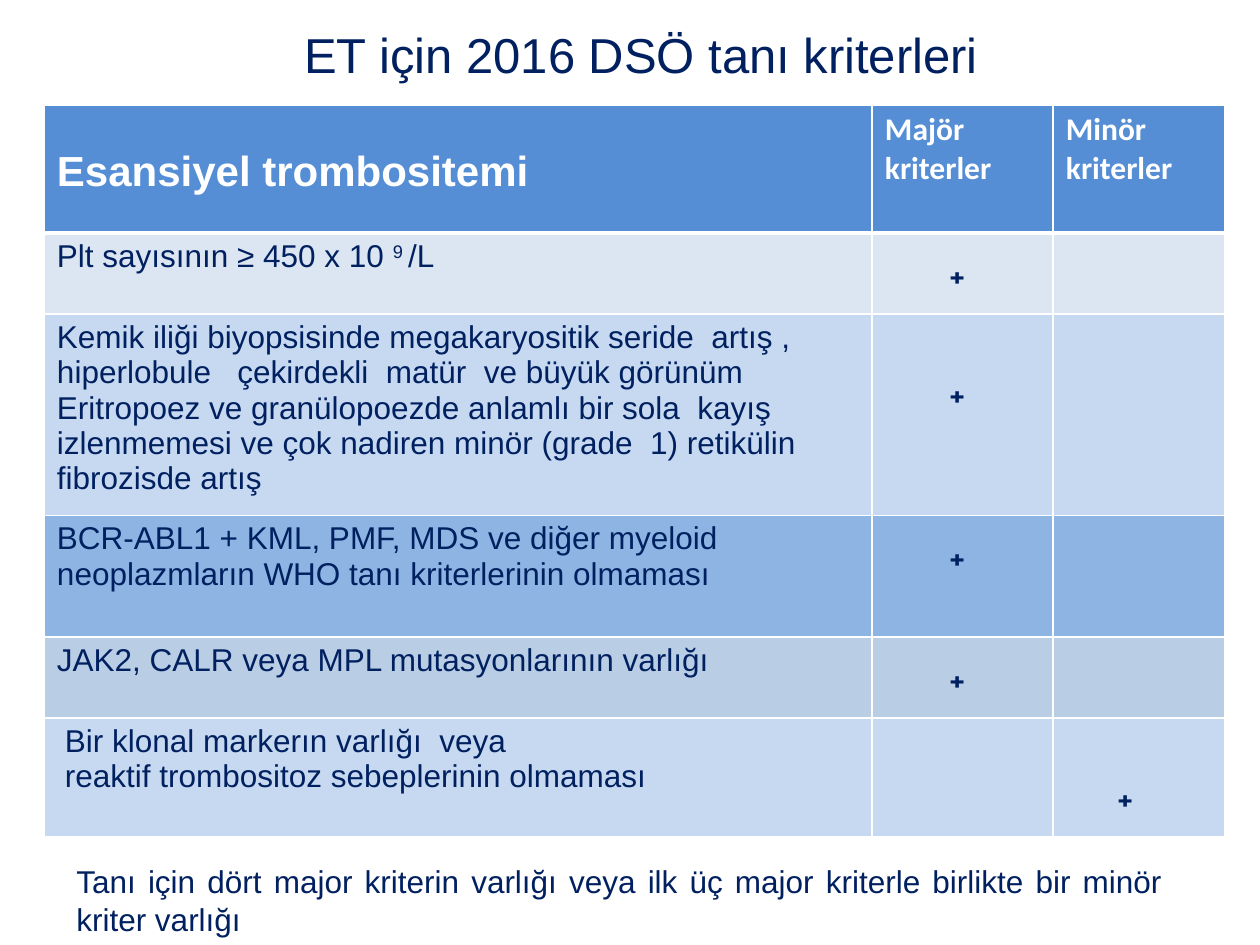
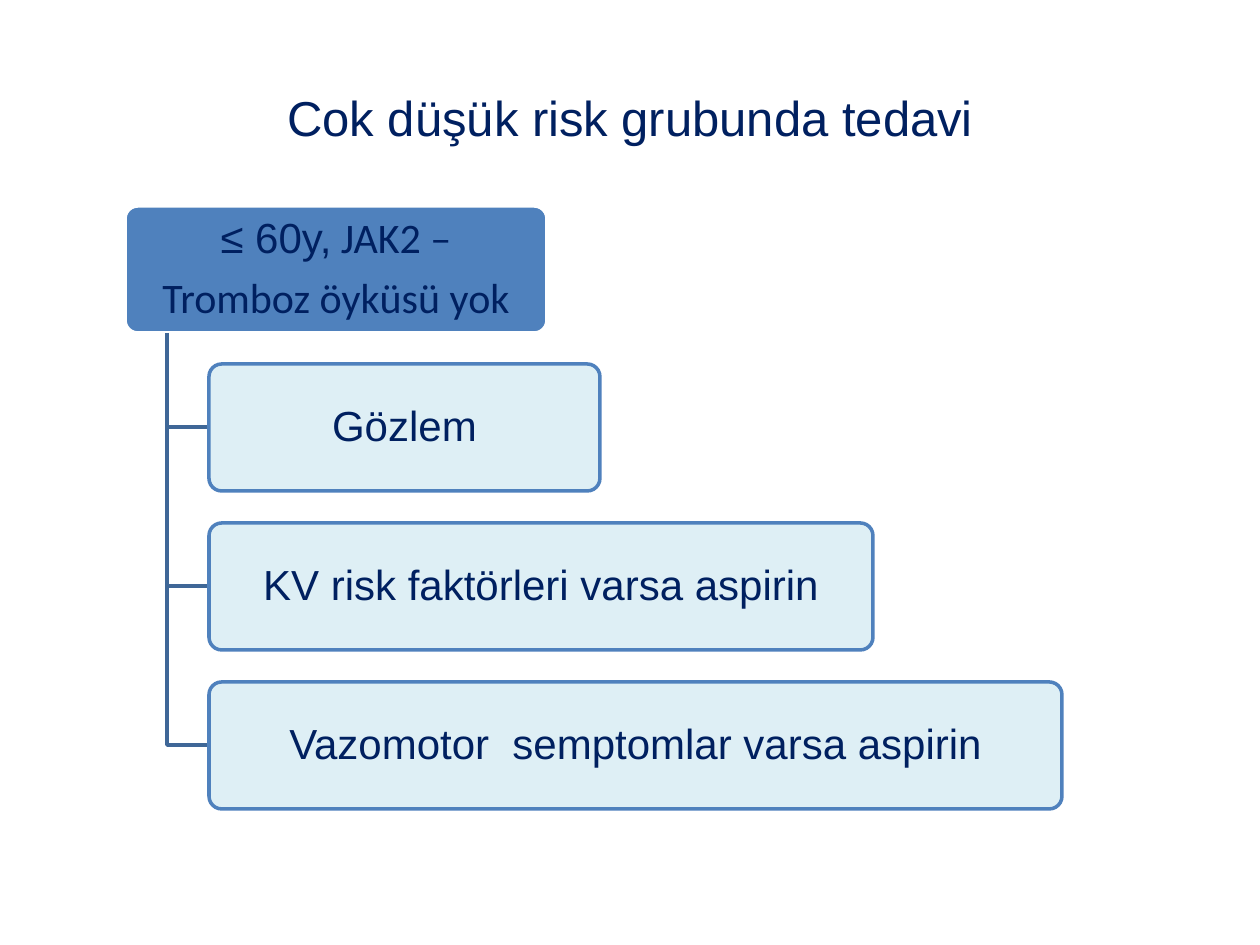
from pptx import Presentation
from pptx.dml.color import RGBColor
from pptx.enum.shapes import MSO_SHAPE
from pptx.enum.text import MSO_ANCHOR, PP_ALIGN
from pptx.oxml.ns import qn
from pptx.util import Emu, Pt
from lxml.etree import SubElement

PX = 914400 / 126
NAVY = RGBColor(0x00, 0x20, 0x60)
WHITE = RGBColor(0xFF, 0xFF, 0xFF)
HEADER = RGBColor(0x55, 0x8E, 0xD5)
ICE = RGBColor(0xDC, 0xE6, 0xF2)
SKY = RGBColor(0xC6, 0xD9, 0xF1)
MID = RGBColor(0x8E, 0xB4, 0xE3)
STEEL = RGBColor(0xB9, 0xCD, 0xE5)
BLUE = RGBColor(0x4F, 0x81, 0xBD)
ELBOW = RGBColor(0x3F, 0x67, 0x97)
PALE = RGBColor(0xDB, 0xEE, 0xF4)
SANS = "Arial"
BODY = "Calibri"
MARK = "˖"


def px(n):
    return Emu(round(n * PX))


class Deck:
    def __init__(self):
        self.prs = Presentation()
        self.prs.slide_width = px(1260)
        self.prs.slide_height = px(945)
        self.s = None

    def slide(self):
        self.s = self.prs.slides.add_slide(self.prs.slide_layouts[6])

    def run(self, p, text, size, font=SANS, color=NAVY, bold=False, raised=False):
        r = p.add_run()
        r.text = text
        r.font.size = Pt(size)
        r.font.name = font
        r.font.color.rgb = color
        r.font.bold = bold
        if raised:
            r.font._element.set("baseline", "30000")

    def paragraphs(self, tf, lines, size, align=PP_ALIGN.LEFT, **style):
        for i, line in enumerate(lines):
            p = tf.add_paragraph() if i else tf.paragraphs[0]
            p.alignment = align
            for text, extra in line:
                self.run(p, text, size, **{**style, **extra})

    def text(self, x, y, w, h, text, size, align, anchor=MSO_ANCHOR.TOP):
        tf = self.s.shapes.add_textbox(px(x), px(y), px(w), px(h)).text_frame
        tf.word_wrap = True
        tf.vertical_anchor = anchor
        self.paragraphs(tf, [[(text, {})]], size, align)

    def title(self, x, y, w, h, text):
        self.text(x, y, w, h, text, 28, PP_ALIGN.CENTER, MSO_ANCHOR.MIDDLE)

    def box(self, x, y, w, h, lines, fill, line, alpha=None):
        sp = self.s.shapes.add_shape(
            MSO_SHAPE.ROUNDED_RECTANGLE, px(x), px(y), px(w), px(h))
        sp.adjustments[0] = 0.1
        sp.shadow.inherit = False
        sp.fill.solid()
        sp.fill.fore_color.rgb = fill
        if alpha:
            clr = sp._element.spPr.find(qn("a:solidFill"))[0]
            SubElement(clr, qn("a:alpha")).set("val", str(alpha * 1000))
        sp.line.color.rgb = line
        sp.line.width = Pt(2)
        tf = sp.text_frame
        tf.word_wrap = True
        tf.vertical_anchor = MSO_ANCHOR.MIDDLE
        tf.margin_left = tf.margin_right = px(10)
        tf.margin_top = tf.margin_bottom = px(8)
        self.paragraphs(tf, lines, 24, PP_ALIGN.CENTER)
        for p in tf.paragraphs:
            p.line_spacing = 0.9
            p.space_after = Pt(8.4)

    def elbow(self, x, y, to_x, to_y):
        path = self.s.shapes.build_freeform(x, y, scale=PX)
        path.add_line_segments([(x, to_y), (to_x, to_y)], close=False)
        sp = path.convert_to_shape()
        sp.shadow.inherit = False
        sp.fill.background()
        sp.line.color.rgb = ELBOW
        sp.line.width = Pt(2)

    def table(self, x, y, widths, heights):
        table = self.s.shapes.add_table(
            len(heights), len(widths), px(x), px(y),
            px(sum(widths)), px(sum(heights))).table
        for column, w in zip(table.columns, widths):
            column.width = px(w)
        for row, h in zip(table.rows, heights):
            row.height = px(h)
        return table

    def cell(self, cell, fill, bottom=1):
        tcPr = cell._tc.get_or_add_tcPr()
        for side, width in (("L", 1), ("R", 1), ("T", 1), ("B", bottom)):
            ln = SubElement(tcPr, qn(f"a:ln{side}"), w=str(Pt(width)))
            SubElement(SubElement(ln, qn("a:solidFill")), qn("a:srgbClr"), val=str(WHITE))
        cell.fill.solid()
        cell.fill.fore_color.rgb = fill

    def cell_text(self, cell, lines, size, left=13, top=6, **style):
        cell.margin_left = px(left)
        cell.margin_top = px(top)
        self.paragraphs(cell.text_frame, lines, size, **style)


def criteria_slide(deck):
    deck.slide()
    deck.title(74, 0, 1134, 107, "ET için 2016 DSÖ tanı kriterleri")
    one_line_down = 44
    rows = [
        (81, ICE, 1, 6, 13, [[("Plt sayısının ≥ 450 x 10 ", {}),
                              ("9 ", {"raised": True}), ("/L", {})]]),
        (189, SKY, 1, one_line_down, 13, [[(
            "Kemik iliği biyopsisinde megakaryositik seride  artış , "
            "hiperlobule   çekirdekli  matür  ve büyük görünüm "
            "Eritropoez ve granülopoezde anlamlı bir sola  kayış "
            "izlenmemesi ve çok nadiren minör (grade  1) retikülin "
            "fibrozisde artış", {})]]),
        (122, MID, 1, 6, 13, [[(
            "BCR-ABL1 + KML, PMF, MDS ve diğer myeloid "
            "neoplazmların WHO tanı kriterlerinin olmaması", {})]]),
        (81, STEEL, 1, 6, 13, [[("JAK2, CALR veya MPL mutasyonlarının varlığı", {})]]),
        (119, SKY, 2, one_line_down, 21, [
            [("Bir klonal markerın varlığı  veya", {})],
            [("reaktif trombositoz sebeplerinin olmaması", {})]]),
    ]
    table = deck.table(44, 105, [828, 181, 172], [128] + [row[0] for row in rows])
    for c in range(3):
        deck.cell(table.cell(0, c), HEADER, bottom=3)
    heading = {"color": WHITE, "bold": True}
    deck.cell_text(table.cell(0, 0), [[("Esansiyel trombositemi", {})]], 24,
                   top=one_line_down, **heading)
    for c, kind in enumerate(("Majör", "Minör"), 1):
        deck.cell_text(table.cell(0, c), [[(kind, {})], [("kriterler", {})]], 18,
                       font=BODY, **heading)
    mark_left = {1: 76, 2: 63}
    for i, (_, fill, mark_column, mark_top, left, lines) in enumerate(rows, 1):
        for c in range(3):
            deck.cell(table.cell(i, c), fill)
        deck.cell_text(table.cell(i, 0), lines, 18, left=left)
        deck.cell_text(table.cell(i, mark_column), [[(MARK, {})]], 32, font=BODY,
                       left=mark_left[mark_column], top=mark_top)
    deck.text(64, 856, 1111, 89,
              "Tanı için dört major kriterin varlığı veya ilk üç major "
              "kriterle birlikte bir minör kriter varlığı", 18, PP_ALIGN.JUSTIFY)


def treatment_slide(deck):
    deck.slide()
    deck.title(63, 38, 1134, 158, "Cok düşük risk grubunda tedavi")
    calibri = {"font": BODY}
    height, pitch = 127, 159
    deck.box(125, 206, 422, height,
             [[("≤ 60y,", {}), (" JAK2 –", calibri)],
              [("Tromboz öyküsü yok", calibri)]], BLUE, WHITE)
    treatments = [("Gözlem", 391),
                  ("KV risk faktörleri varsa aspirin", 664),
                  ("Vazomotor  semptomlar varsa aspirin", 853)]
    for i, (name, width) in enumerate(treatments):
        top = 364 + i * pitch
        deck.elbow(167, 333, 209, top + height // 2)
        deck.box(209, top, width, height, [[(name, {})]], PALE, BLUE, alpha=90)


def main():
    deck = Deck()
    criteria_slide(deck)
    treatment_slide(deck)
    deck.prs.save("out.pptx")


if __name__ == "__main__":
    main()
